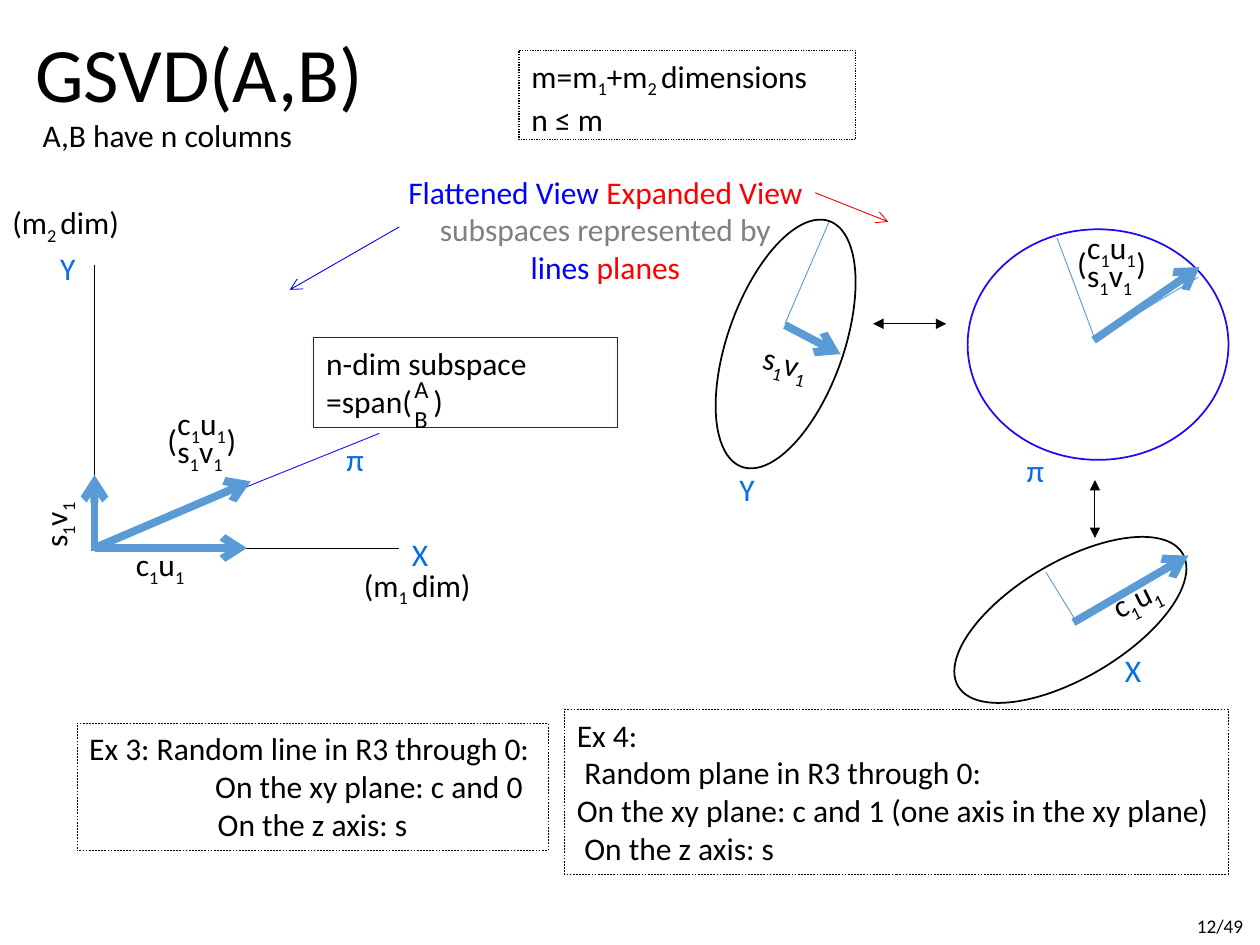
from pptx import Presentation
from pptx.dml.color import RGBColor
from pptx.enum.dml import MSO_LINE
from pptx.enum.shapes import MSO_CONNECTOR, MSO_SHAPE
from pptx.enum.text import MSO_ANCHOR, MSO_AUTO_SIZE, PP_ALIGN
from pptx.oxml.ns import qn
from pptx.util import Inches, Pt
from lxml import etree

STRAIGHT = MSO_CONNECTOR.STRAIGHT
RECTANGLE, ELLIPSE = MSO_SHAPE.RECTANGLE, MSO_SHAPE.OVAL
FIT, FIXED = MSO_AUTO_SIZE.SHAPE_TO_FIT_TEXT, MSO_AUTO_SIZE.NONE
TOP, MIDDLE = MSO_ANCHOR.TOP, MSO_ANCHOR.MIDDLE
LEFT, CENTER = PP_ALIGN.LEFT, PP_ALIGN.CENTER
DOTTED, DASHED = MSO_LINE.ROUND_DOT, MSO_LINE.DASH

THEME = {
    "font": "Calibri",
    "title": 44, "body": 18, "small": 14, "number": 11,
    "black": "000000", "label": "066DEA", "subspace": "1B0AFC",
    "vector": "5B9BD5", "flat": "0000FF", "expanded": "FF0000", "muted": "808080",
}


def write(box, lines, size="body", color="black", wrap=False, tab=None,
          indents=(), **formats):
    frame = box.text_frame
    settings = {"word_wrap": wrap, "auto_size": FIT, "vertical_anchor": TOP}
    for name, value in settings.items():
        setattr(frame, name, value)
    for index, line in enumerate(lines):
        para = frame.paragraphs[0] if index == 0 else frame.add_paragraph()
        for name, value in {"alignment": LEFT, **formats}.items():
            setattr(para, name, value)
        properties = para._p.get_or_add_pPr()
        if indents:
            properties.set("marL", str(Inches(indents[index])))
            properties.set("indent", "0")
        if tab:
            stops = etree.SubElement(properties, qn("a:tabLst"))
            etree.SubElement(stops, qn("a:tab"), pos=str(Inches(tab)), algn="l")
        parts = [(line, color)] if isinstance(line, str) else line
        for text, part_color in parts:
            for position, piece in enumerate(text.split("|")):
                if not piece:
                    continue
                span = para.add_run()
                span.text = piece
                span.font.name = THEME["font"]
                span.font.size = Pt(THEME[size])
                span.font.color.rgb = RGBColor.from_string(THEME[part_color])
                if position % 2:
                    span._r.get_or_add_rPr().set("baseline", "-25000")


def connect(start, end, color, width=0.5, head=None, tail=None):
    line = page.shapes.add_connector(STRAIGHT, *map(Inches, start + end))
    line.line.color.rgb = RGBColor.from_string(THEME[color])
    line.line.width = Pt(width)
    etree.SubElement(line._element.spPr, qn("a:effectLst"))
    for tag, kind in (("a:headEnd", head), ("a:tailEnd", tail)):
        if kind:
            etree.SubElement(line.line._get_or_add_ln(), qn(tag), type=kind)


deck = Presentation()
deck.slide_width, deck.slide_height = Inches(10), Inches(7.5)
page = deck.slides.add_slide(deck.slide_layouts[5])

title = page.shapes.title
title.left, title.top, title.width, title.height = map(Inches, (0.18, -0.11, 8.62, 1.45))
write(title, ["GSVD(A,B)"], "title", wrap=True, line_spacing=0.9)
title.text_frame.auto_size = FIXED
title.text_frame.vertical_anchor = MIDDLE

origin = (0.75, 4.35)
y_center, plane_center, x_center = (6.23, 2.57), (8.69, 2.69), (8.54, 4.93)

thin_lines = [
    (origin, (0.75, 2.1), "black"),
    (origin, (3.17, 4.35), "black"),
    (origin, (3.01, 3.44), "subspace"),
    (x_center, (9.43, 4.41), "vector"),
    (x_center, (8.3, 4.54), "vector"),
    (y_center, (6.67, 2.81), "vector"),
    (y_center, (6.58, 1.76), "vector"),
    (plane_center, (9.51, 2.2), "vector"),
    (plane_center, (8.39, 1.89), "vector"),
]
for start, end, color in thin_lines:
    connect(start, end, color)

ellipses = [
    (7.68, 1.82, 2.07, 1.83, 0, "subspace"),
    (7.46, 4.46, 2.07, 0.92, 329.4, "black"),
    (5.2, 2.27, 2.07, 0.92, 109.6, "black"),
]
for *place, rotation, color in ellipses:
    ellipse = page.shapes.add_shape(ELLIPSE, *map(Inches, place))
    ellipse.rotation = rotation
    ellipse.shadow.inherit = False
    ellipse.fill.background()
    ellipse.line.color.rgb = RGBColor.from_string(THEME[color])
    ellipse.line.width = Pt(1)

for start, end in [((8.69, 3.81), (8.69, 4.27)), ((6.93, 2.57), (7.51, 2.57))]:
    connect(start, end, "black", head="triangle", tail="triangle")

vectors = [
    (origin, (1.99, 3.82)),
    (origin, (1.96, 4.35)),
    ((0.75, 4.37), (0.75, 3.77)),
    ((8.68, 2.7), (9.52, 2.12)),
    ((8.52, 4.94), (9.43, 4.41)),
    ((6.23, 2.58), (6.67, 2.81)),
]
for start, end in vectors:
    connect(start, end, "vector", 4.5, tail="arrow")

connect((3.17, 1.8), (2.3, 2.3), "flat", tail="arrow")
connect((6.47, 1.53), (7.05, 1.76), "expanded", tail="arrow")

framed_boxes = [
    ((2.49, 2.68, 2.41, 0.71), "subspace", 0.5, None,
     ["n-dim subspace =span(\t)"], {"wrap": True, "tab": 0.85}),
    ((4.12, 0.4, 2.67, 0.71), "black", 0.75, DOTTED,
     ["m=m|1|+m|2 |dimensions", "n ≤ m"], {"wrap": True}),
    ((4.48, 5.63, 5.27, 1.31), "black", 0.25, DASHED,
     ["Ex 4:", "Random plane in R3 through 0:",
      "On the xy plane: c and 1 (one axis in the xy plane)", "On the z axis: s"],
     {"indents": (0, 0.06, 0, 0.06)}),
    ((0.61, 5.74, 3.74, 1.01), "black", 0.25, DASHED,
     ["Ex 3: Random line in R3 through 0:", "On the xy plane: c and 0",
      "On the z axis: s"], {"indents": (0, 1, 1.02)}),
]
for place, color, width, dash, lines, formats in framed_boxes:
    box = page.shapes.add_shape(RECTANGLE, *map(Inches, place))
    box.shadow.inherit = False
    box.fill.background()
    box.line.color.rgb = RGBColor.from_string(THEME[color])
    box.line.width = Pt(width)
    if dash:
        box.line.dash_style = dash
    write(box, lines, **formats)

c_vector, s_vector = "c|1|u|1", "s|1|v|1"
labels = [
    ("X", 3.17, 4.2, 0.5, 0.5, 0, "label"),
    ("Y", 0.38, 1.93, 0.5, 0.5, 0, "label"),
    ("X", 8.83, 5.12, 0.5, 0.5, 0, "label"),
    ("Y", 5.77, 3.68, 0.5, 0.5, 0, "label"),
    ("π", 2.65, 3.44, 0.37, 0.5, 0, "label"),
    ("π", 8.05, 3.53, 0.37, 0.5, 0, "label"),
    ("(m|1 |dim)", 2.79, 4.44, 1.07, 0.4, 0, "black"),
    ("(m|2 |dim)", 0, 1.56, 1.07, 0.4, 0, "black"),
    (c_vector, 8.72, 4.54, 0.61, 0.4, 333.7, "black"),
    (s_vector, 5.96, 2.68, 0.59, 0.4, 14.2, "black"),
    (c_vector, 0.98, 4.28, 0.61, 0.71, 0, "black"),
    (s_vector, 0.14, 3.95, 0.59, 0.4, 270, "black"),
    ("A,B have n columns", 0.24, 0.87, 2.21, 0.4, 0, "black"),
]
for text, *place, rotation, color in labels:
    label = page.shapes.add_textbox(*map(Inches, place))
    label.rotation = rotation
    write(label, [text], color=color, wrap=text in ("X", "Y"))

for left, top in [(1.23, 3.16), (8.45, 1.76)]:
    stacked_vector = page.shapes.add_group_shape()
    members = [
        (c_vector, 0.08, 0, 0.61, {}),
        (s_vector, 0.08, 0.22, 0.59, {}),
        ("(\t)", 0, 0.13, 1.04, {"wrap": True, "tab": 0.47}),
    ]
    for text, across, down, width, formats in members:
        member = stacked_vector.shapes.add_textbox(
            Inches(left + across), Inches(top + down), Inches(width), Inches(0.4))
        write(member, [text], **formats)

views = page.shapes.add_textbox(Inches(3.09), Inches(1.32), Inches(3.43), Inches(1.01))
write(views, [
    [("Flattened View ", "flat"), ("Expanded View", "expanded")],
    [("subspaces represented by", "muted")],
    [("lines", "flat"), (" planes", "expanded")],
], alignment=CENTER)

matrix = page.shapes.add_textbox(Inches(3.19), Inches(2.92), Inches(0.32), Inches(0.57))
write(matrix, ["A", "B"], "small")

number = page.shapes.add_textbox(Inches(9.4), Inches(7.21), Inches(0.6), Inches(0.29))
write(number, ["12/49"], "number")

deck.save("out.pptx")
